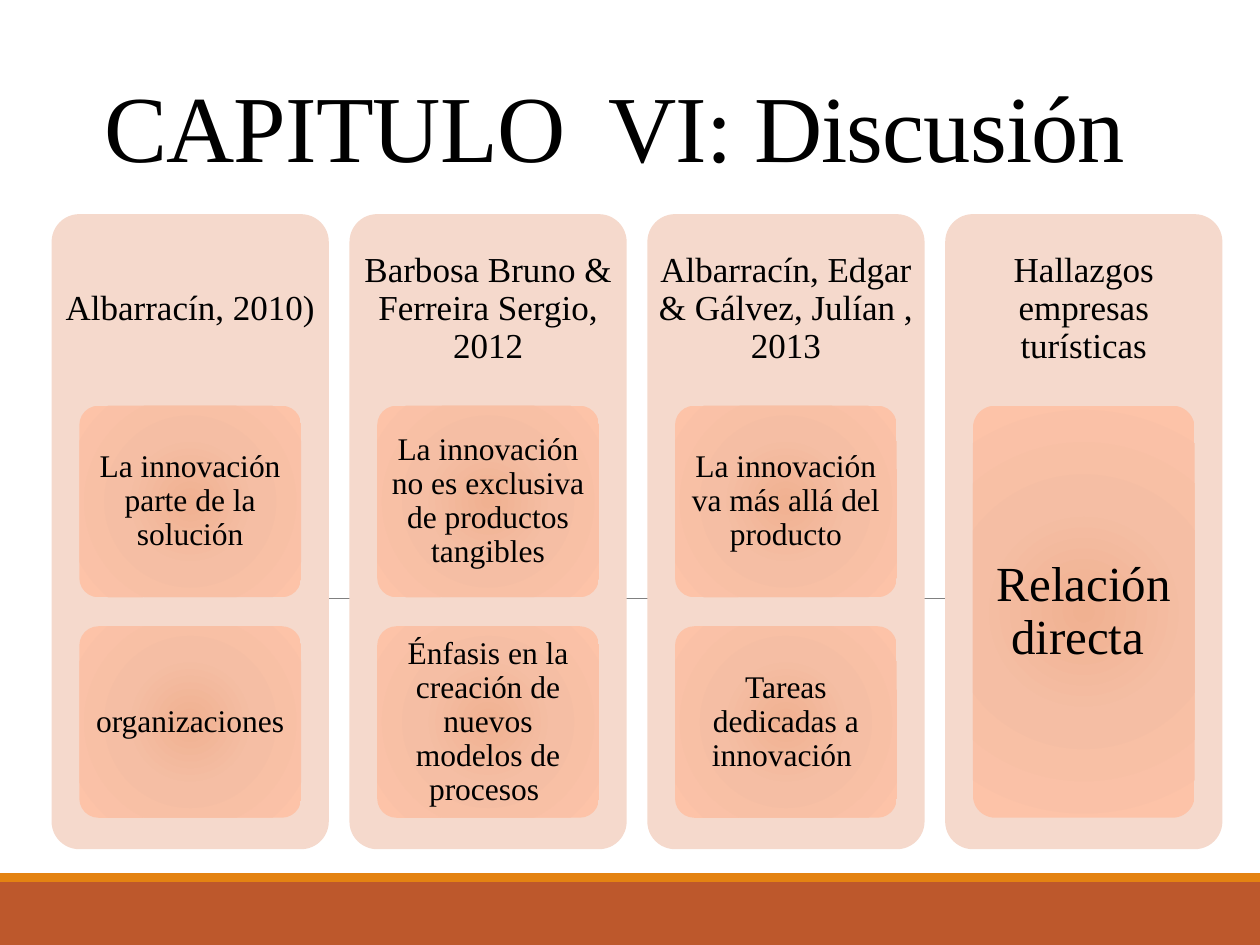
import pptx
import pptx.util
import pptx.dml.color
import pptx.enum.shapes
import pptx.enum.text
import pptx.oxml
import pptx.oxml.ns

RGB = pptx.dml.color.RGBColor
BLACK = RGB(0x00, 0x00, 0x00)
GRAY = RGB(0x80, 0x80, 0x80)
RUST = RGB(0xBD, 0x58, 0x2C)
ORANGE = RGB(0xE4, 0x83, 0x12)
PEACH = RGB(0xF5, 0xD9, 0xCC)
STOPS = [(0, RGB(0xF0, 0xB1, 0x91)), (45, RGB(0xF5, 0xBE, 0xA4)), (100, RGB(0xFD, 0xC3, 0xA8))]

FONT = "Times New Roman"
NS = pptx.oxml.ns.nsdecls("a")
SHAPE = pptx.enum.shapes.MSO_SHAPE
ANCHOR = pptx.enum.text.MSO_ANCHOR
inch = pptx.util.Inches

prs = pptx.Presentation()
prs.slide_width, prs.slide_height = inch(10), inch(7.5)
s = prs.slides.add_slide(prs.slide_layouts[5])


def add_box(kind, box, color=None):
    """Add a borderless shape; without a colour it gets the radial gradient."""
    sp = s.shapes.add_shape(kind, *map(inch, box))
    sp.shadow.inherit = False
    sp.line.fill.background()
    if kind == SHAPE.ROUNDED_RECTANGLE:
        sp.adjustments[0] = 0.1
    if color is not None:
        sp.fill.solid()
        sp.fill.fore_color.rgb = color
        return
    sp.fill.gradient()
    grad = sp._element.spPr.find(pptx.oxml.ns.qn("a:gradFill"))
    for child in list(grad):
        grad.remove(child)
    stops = "".join(f'<a:gs pos="{pos * 1000}"><a:srgbClr val="{c}"/></a:gs>' for pos, c in STOPS)
    grad.append(pptx.oxml.parse_xml(f"<a:gsLst {NS}>{stops}</a:gsLst>"))
    grad.append(pptx.oxml.parse_xml(
        f'<a:path {NS} path="circle"><a:fillToRect l="100000" t="100000" r="100000" b="100000"/></a:path>'))


def write(sp, text, size, inset, anchor=ANCHOR.MIDDLE, spacing=0.9):
    """Put one centred paragraph in a text frame."""
    tf = sp.text_frame
    dx, dy = map(inch, inset)
    frame = {"word_wrap": True, "auto_size": pptx.enum.text.MSO_AUTO_SIZE.NONE,
             "vertical_anchor": anchor, "margin_left": dx, "margin_right": dx,
             "margin_top": dy, "margin_bottom": dy}
    for name, value in frame.items():
        setattr(tf, name, value)
    p = tf.paragraphs[0]
    p.alignment, p.line_spacing = pptx.enum.text.PP_ALIGN.CENTER, spacing
    r = p.add_run()
    r.text = text
    for name, value in {"name": FONT, "size": pptx.util.Pt(size)}.items():
        setattr(r.font, name, value)
    r.font.color.rgb = BLACK
    return r


# Footer bands and rule
add_box(SHAPE.RECTANGLE, (0, 7, 10, 0.5), RUST)
add_box(SHAPE.RECTANGLE, (0, 6.93, 10, 0.07), ORANGE)
rule = s.shapes.add_connector(pptx.enum.shapes.MSO_CONNECTOR.STRAIGHT,
                              *map(inch, (0.99, 4.75, 9.09, 4.75)))
rule.line.color.rgb = GRAY
rule.line.width = pptx.util.Pt(0.5)
rule._element.spPr.append(pptx.oxml.parse_xml(f"<a:effectLst {NS}/>"))

# Title
title = s.shapes.title
for name, value in zip(("left", "top", "width", "height"), (0.43, 0.6, 8.9, 0.89)):
    setattr(title, name, inch(value))
r = write(title, "CAPITULO  VI: Discusión", 54, (0.1, 0.05), ANCHOR.BOTTOM, 0.85)
r._r.get_or_add_rPr().set("spc", "-50")

# Columns: heading, then cards stacked in the body
COLUMNS = [
    ("Albarracín, 2010)", ["La innovación parte de la solución", "organizaciones"]),
    ("Barbosa Bruno & Ferreira Sergio, 2012",
     ["La innovación no es exclusiva de productos tangibles",
      "Énfasis en la creación de nuevos modelos de procesos "]),
    ("Albarracín, Edgar & Gálvez, Julían , 2013",
     ["La innovación va más allá del producto", "Tareas dedicadas a innovación "]),
    ("Hallazgos empresas turísticas", ["Relación directa "]),
]
LEFT, TOP, PITCH, COL_W, COL_H = 0.41, 1.7, 2.364, 2.2, 5.04
HEAD_H = 0.3 * COL_H
CARD_W, BODY_TOP, BODY_H, GAP = 0.8 * COL_W, 3.22, 3.27, 0.23

for i, (heading, cards) in enumerate(COLUMNS):
    x = LEFT + i * PITCH
    add_box(SHAPE.ROUNDED_RECTANGLE, (x, TOP, COL_W, COL_H), PEACH)
    head = s.shapes.add_textbox(*map(inch, (x, TOP, COL_W, HEAD_H)))
    write(head, heading, 20, (0.08, 0.08))

    size, inset = (18, (0.05, 0.04)) if len(cards) > 1 else (28, (0.08, 0.06))
    card_x = x + 0.1 * COL_W
    card_h = (BODY_H - GAP * (len(cards) - 1)) / len(cards)
    pad = 0.029 * min(CARD_W, card_h)
    for j, text in enumerate(cards):
        y = BODY_TOP + j * (card_h + GAP)
        add_box(SHAPE.ROUNDED_RECTANGLE, (card_x, y, CARD_W, card_h))
        label = s.shapes.add_textbox(
            *map(inch, (card_x + pad, y + pad, CARD_W - 2 * pad, card_h - 2 * pad)))
        write(label, text, size, inset)

prs.save("out.pptx")
